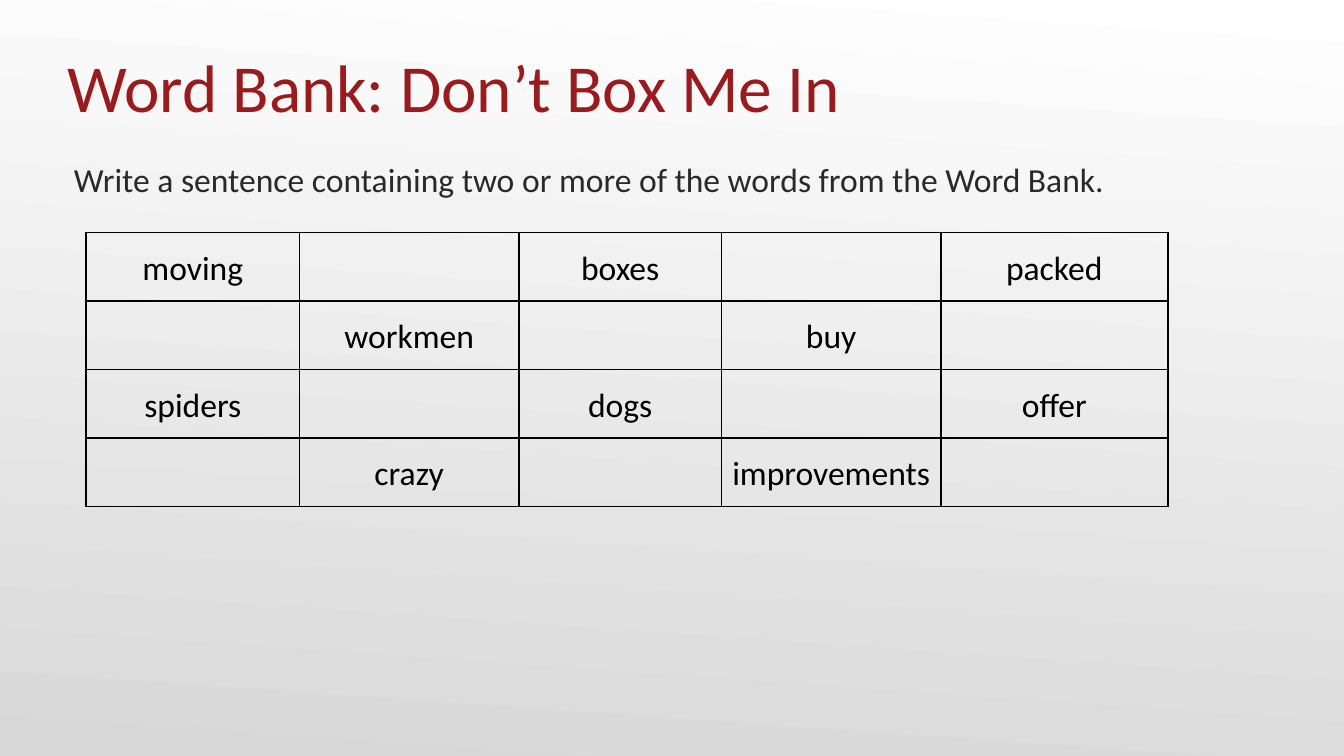
"""Build the Word Bank vocabulary slide."""
from lxml import etree
from pptx import Presentation
from pptx.dml.color import RGBColor
from pptx.enum.text import MSO_ANCHOR, MSO_AUTO_SIZE, PP_ALIGN
from pptx.oxml.ns import qn
from pptx.util import Inches, Pt


def rgb(color):
    """Return the colour for a hex string."""
    return RGBColor.from_string(color)


def write(tf, text, size=18, color="000000", align=PP_ALIGN.LEFT, spacing=1.0, anchor=MSO_ANCHOR.TOP):
    """Put one formatted paragraph without a bullet into a text frame."""
    tf.vertical_anchor = anchor
    tf.word_wrap = True
    p = tf.paragraphs[0]
    pPr = p._p.get_or_add_pPr()
    pPr.set("marL", "0")
    pPr.set("indent", "0")
    etree.SubElement(pPr, qn("a:buNone"))
    p.alignment = align
    p.line_spacing = spacing
    p.space_before = Pt(0)
    r = p.add_run()
    r.text = text
    r.font.name = "Calibri"
    r.font.size = Pt(size)
    r.font.color.rgb = rgb(color)


prs = Presentation()
prs.slide_width, prs.slide_height = Inches(10), Inches(10 * 9 / 16)
s = prs.slides.add_slide(prs.slide_layouts[1])

bg = s.background.fill
bg.gradient()
bg.gradient_angle = 266
for stop, color in zip(bg.gradient_stops, ("FFFFFF", "D8D8D8")):
    stop.color.rgb = rgb(color)

title, body = s.placeholders
for sp, top, height, side, edge in ((title, 0, 0.94, 0, 0.05), (body, 1.18, 0.66, 0.05, 0)):
    sp.left, sp.top = Inches(0.5), Inches(top)
    sp.width, sp.height = Inches(9), Inches(height)
    tf = sp.text_frame
    tf.auto_size = MSO_AUTO_SIZE.NONE
    tf.margin_left = tf.margin_right = Inches(side)
    tf.margin_top, tf.margin_bottom = Inches(edge), Inches(0)

write(title.text_frame, "Word Bank: Don’t Box Me In", size=36, color="991B1E", anchor=MSO_ANCHOR.BOTTOM)
write(body.text_frame, "Write a sentence containing two or more of the words from the Word Bank.", color="292929")

words = [
    ["moving", "", "boxes", "", "packed"],
    ["", "workmen", "", "buy", ""],
    ["spiders", "", "dogs", "", "offer"],
    ["", "crazy", "", "improvements", ""],
]
widths = [1.59, 1.63, 1.51, 1.63, 1.69]
row_height = 0.51
frame = s.shapes.add_table(len(words), len(widths), Inches(0.64), Inches(1.73),
                           Inches(sum(widths)), Inches(row_height * len(words)))
table = frame.table
table.first_row = table.horz_banding = False
for column, width in zip(table.columns, widths):
    column.width = Inches(width)

for row, row_words in zip(table.rows, words):
    row.height = Inches(row_height)
    for cell, word in zip(row.cells, row_words):
        cell.margin_left = cell.margin_right = Inches(0.07)
        cell.margin_top = cell.margin_bottom = Inches(0.07)
        tcPr = cell._tc.get_or_add_tcPr()
        for side in ("a:lnL", "a:lnR", "a:lnT", "a:lnB"):
            ln = etree.SubElement(tcPr, qn(side), w=str(Pt(1)))
            etree.SubElement(etree.SubElement(ln, qn("a:solidFill")), qn("a:srgbClr"), val="000000")
        cell.fill.background()
        if word:
            write(cell.text_frame, word, align=PP_ALIGN.CENTER, spacing=1.15)

prs.save("out.pptx")
